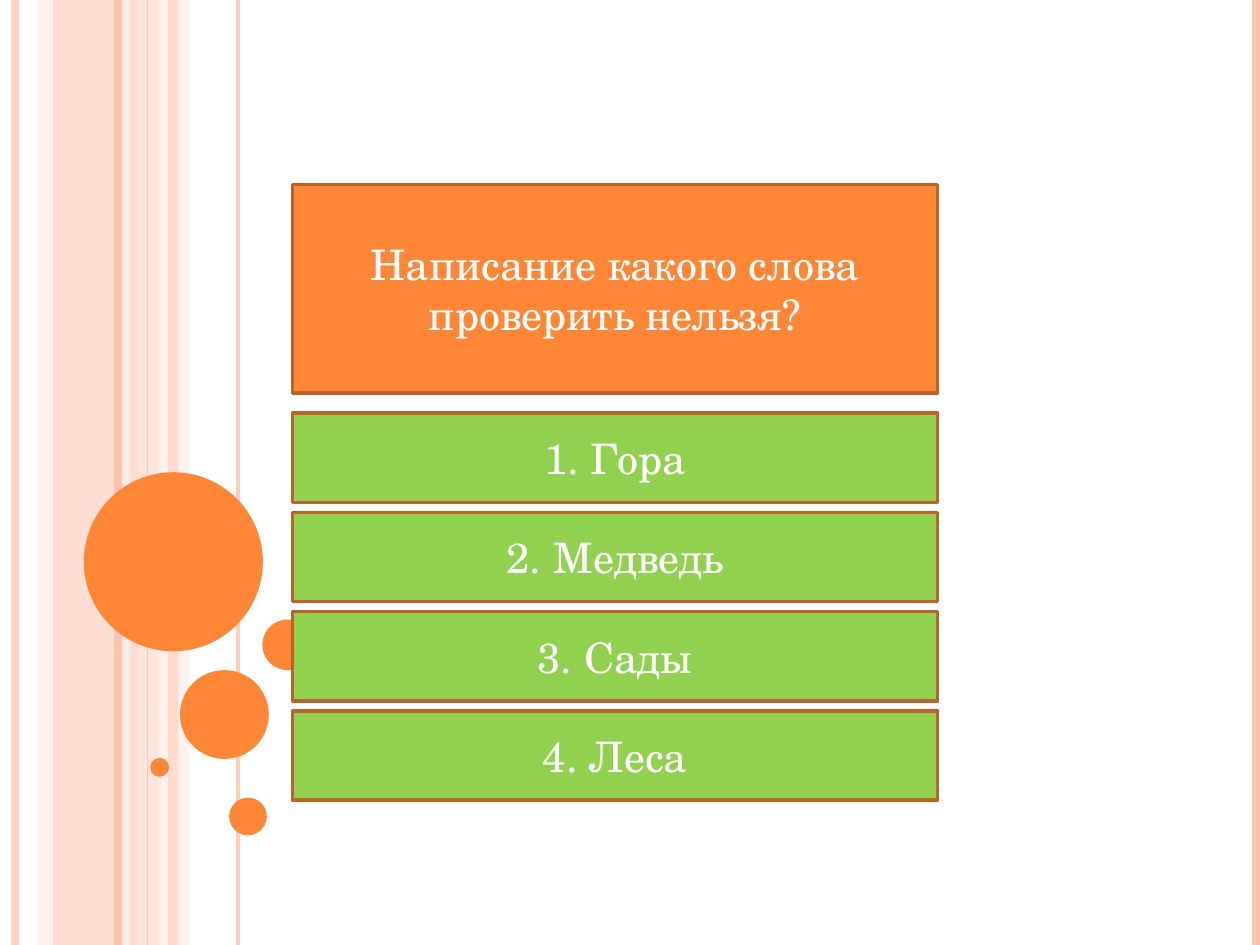
from pptx import Presentation
from pptx.dml.color import RGBColor
from pptx.enum.shapes import MSO_CONNECTOR, MSO_SHAPE
from pptx.enum.text import MSO_ANCHOR, MSO_AUTO_SIZE, PP_ALIGN
from pptx.oxml.ns import qn
from pptx.util import Cm, Pt
from lxml.etree import SubElement

ORANGE = RGBColor(0xFE, 0x86, 0x37)
BROWN = RGBColor(0xBC, 0x63, 0x29)
GREEN = RGBColor(0x92, 0xD0, 0x50)
WHITE = RGBColor(0xFF, 0xFF, 0xFF)
PEACH = RGBColor(0xFE, 0xC3, 0xAE)
PINK = RGBColor(0xFF, 0xD9, 0xCE)
PALE = RGBColor(0xFF, 0xED, 0xE8)
HEIGHT = Cm(19.05)


def fade(shape, alpha):
    if alpha < 100:
        color = next(shape._element.spPr.iter(qn("a:srgbClr")))
        SubElement(color, qn("a:alpha")).set("val", str(alpha * 1000))


def write(shape, text, fill=GREEN, size=24, color=WHITE, font="TeX Gyre Schola"):
    shape.fill.solid()
    shape.fill.fore_color.rgb = fill
    shape.line.color.rgb = BROWN
    shape.line.width = Pt(2)
    frame = shape.text_frame
    frame.word_wrap = True
    frame.auto_size = MSO_AUTO_SIZE.NONE
    frame.vertical_anchor = MSO_ANCHOR.MIDDLE
    para = frame.paragraphs[0]
    para.alignment = PP_ALIGN.CENTER
    run = para.add_run()
    run.text = text
    run.font.size = Pt(size)
    run.font.name = font
    run.font.color.rgb = color


deck = Presentation()
deck.slide_width, deck.slide_height = Cm(25.4), HEIGHT
slide = deck.slides.add_slide(deck.slide_layouts[5])
shapes = slide.shapes

bands = [
    (1.06, 1.7, PEACH, 54),
    (0.76, 0.29, PINK, 36),
    (2.74, 0.52, PINK, 70),
    (3.18, 0.64, PALE, 71),
    (3.39, 0.21, PEACH, 51),
]
lines = [
    (0.3, 4.5, PEACH, 73),
    (2.54, 4.5, PALE, 83),
    (2.37, 4.5, PEACH, 100),
    (4.8, 2.25, PEACH, 82),
    (2.97, 0.75, PEACH, 100),
    (25.32, 4.5, PEACH, 100),
]
for left, width, color, alpha in bands:
    band = shapes.add_shape(MSO_SHAPE.RECTANGLE, Cm(left), 0, Cm(width), HEIGHT)
    band.shadow.inherit = False
    band.fill.solid()
    band.fill.fore_color.rgb = color
    band.line.fill.background()
    fade(band, alpha)

for left, width, color, alpha in lines:
    line = shapes.add_connector(MSO_CONNECTOR.STRAIGHT, Cm(left), 0, Cm(left), HEIGHT)
    line.line.color.rgb = color
    line.line.width = Pt(width)
    fade(line, alpha)
    SubElement(line._element.spPr, qn("a:effectLst"))

circles = [
    (1.69, 9.52, 3.61),
    (3.63, 13.51, 1.79),
    (3.03, 15.28, 0.38),
    (4.62, 16.08, 0.76),
    (5.29, 12.49, 1.02),
]
for left, top, size in circles:
    circle = shapes.add_shape(MSO_SHAPE.OVAL, Cm(left), Cm(top), Cm(size), Cm(size))
    circle.shadow.inherit = False
    circle.fill.solid()
    circle.fill.fore_color.rgb = ORANGE
    circle.line.fill.background()

title = shapes.title
title.left, title.top, title.width, title.height = Cm(5.9), Cm(3.72), Cm(13), Cm(4.2)
write(title, "Написание какого слова проверить нельзя?", fill=ORANGE)

for row, word in enumerate(["Гора", "Медведь", "Сады", "Леса"]):
    box = shapes.add_shape(
        MSO_SHAPE.RECTANGLE, Cm(5.9), Cm(8.33 + 2 * row), Cm(13), Cm(1.8))
    box.shadow.inherit = False
    write(box, f"{row + 1}. {word}")

deck.save("out.pptx")
